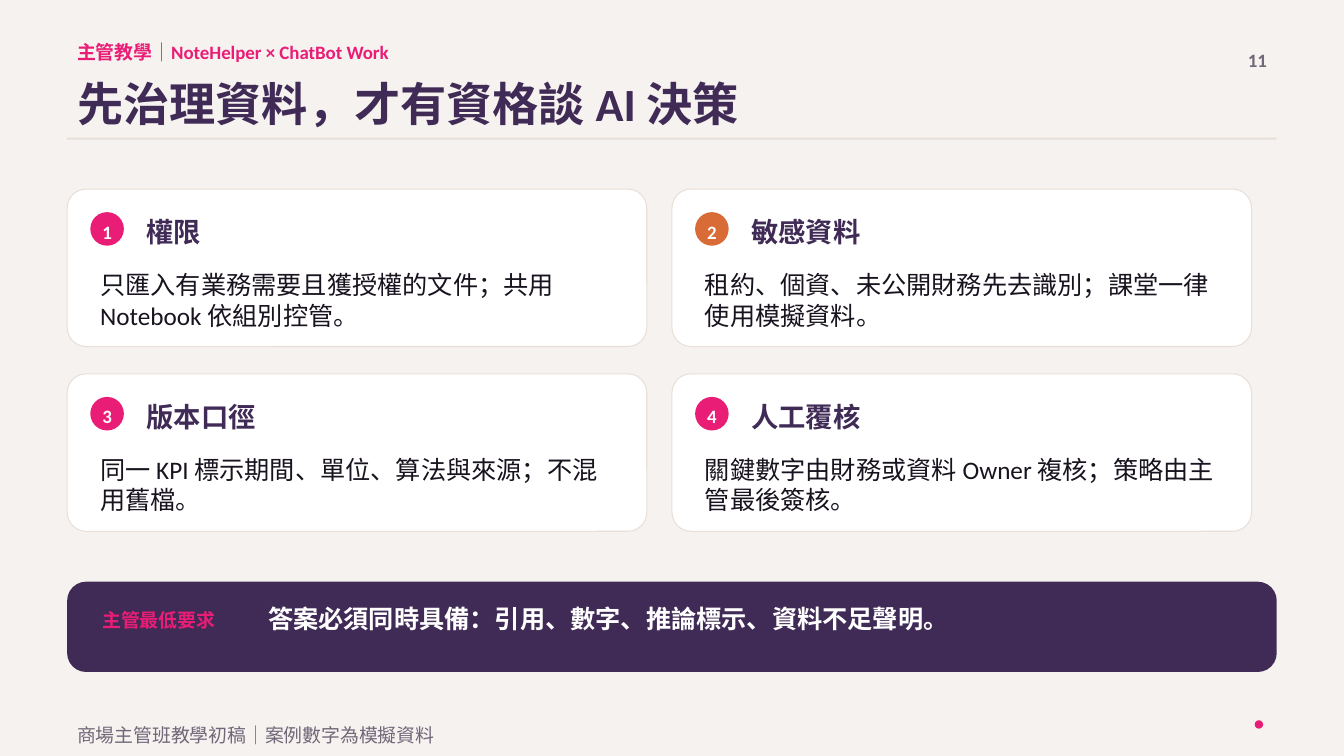
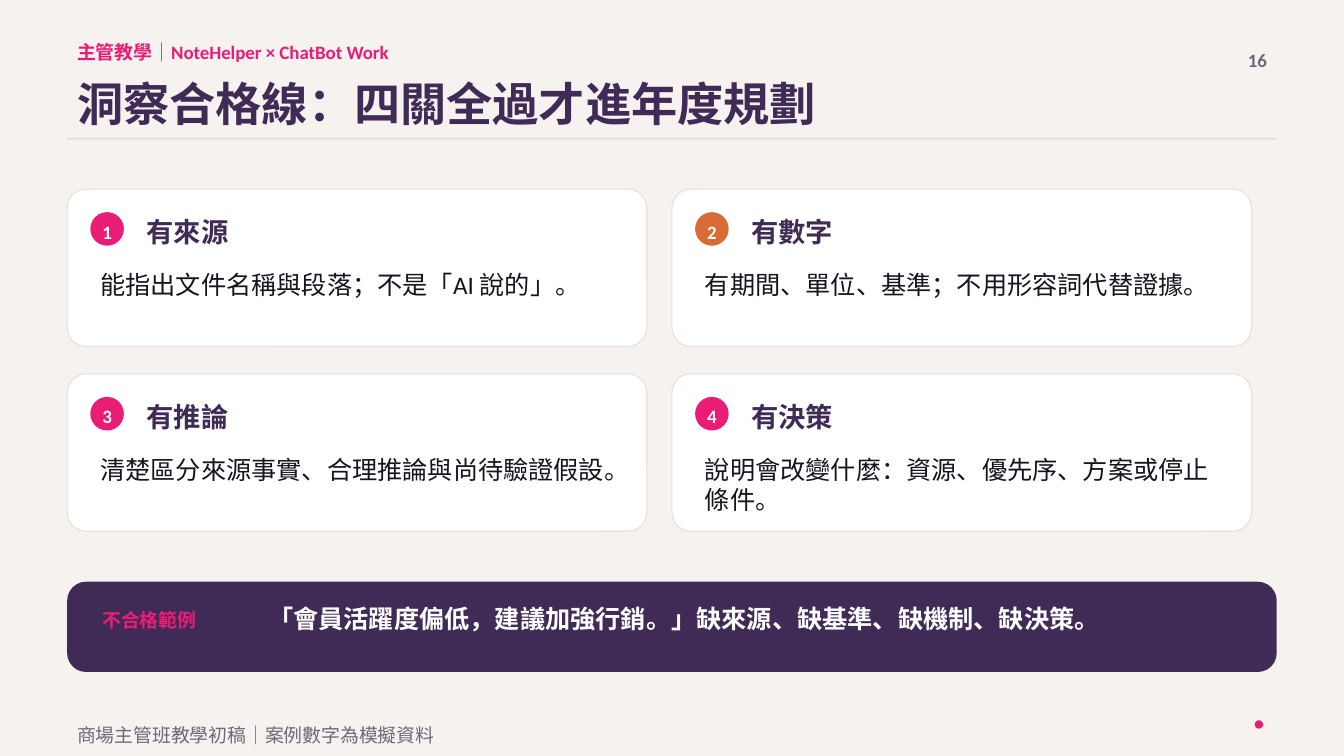
from pptx import Presentation
from pptx.dml.color import RGBColor
from pptx.enum import shapes, text
from pptx.util import Pt

PINK, ORANGE, PURPLE = "EA1D76", "D96C36", "402B56"
PAPER, RULE, WHITE = "F6F2EF", "E8DFD8", "FFFFFF"
INK, GREY = "18131E", "706879"

STYLES = {
    "label": {"size": Pt(13.5), "bold": True},
    "title": {"size": Pt(33), "bold": True},
    "heading": {"size": Pt(19.5), "bold": True},
    "body": {"size": Pt(18), "bold": False},
    "message": {"size": Pt(18), "bold": True},
    "footer": {"size": Pt(13.5), "bold": False},
}
LEFT, CONTENT_WIDTH = 48, 864
CARD_TOP, CARD_WIDTH, CARD_HEIGHT = 135, 414, 112.5
COLUMN_STEP, ROW_STEP = 432, 132
BADGE_COLORS = [PINK, ORANGE, PINK, PINK]

SLIDES = [
    {
        "number": "11",
        "title": "先治理資料，才有資格談 AI 決策",
        "cards": [
            ("權限", "只匯入有業務需要且獲授權的文件；共用 Notebook 依組別控管。"),
            ("敏感資料", "租約、個資、未公開財務先去識別；課堂一律使用模擬資料。"),
            ("版本口徑", "同一 KPI 標示期間、單位、算法與來源；不混用舊檔。"),
            ("人工覆核", "關鍵數字由財務或資料 Owner 複核；策略由主管最後簽核。"),
        ],
        "band": ("主管最低要求", "答案必須同時具備：引用、數字、推論標示、資料不足聲明。"),
    },
    {
        "number": "16",
        "title": "洞察合格線：四關全過才進年度規劃",
        "cards": [
            ("有來源", "能指出文件名稱與段落；不是「AI 說的」。"),
            ("有數字", "有期間、單位、基準；不用形容詞代替證據。"),
            ("有推論", "清楚區分來源事實、合理推論與尚待驗證假設。"),
            ("有決策", "說明會改變什麼：資源、優先序、方案或停止條件。"),
        ],
        "band": ("不合格範例", "「會員活躍度偏低，建議加強行銷。」缺來源、缺基準、缺機制、缺決策。"),
    },
]


def add_text(slide, content, box, style, color, align="LEFT"):
    frame = slide.shapes.add_textbox(*map(Pt, box)).text_frame
    frame.word_wrap = True
    paragraph = frame.paragraphs[0]
    paragraph.alignment = text.PP_ALIGN[align]
    run = paragraph.add_run()
    run.text = content
    run.font.name = "Calibri"
    run.font.color.rgb = RGBColor.from_string(color)
    for name, value in STYLES[style].items():
        setattr(run.font, name, value)


def add_block(slide, kind, box, fill, line=None, rounding=None):
    """Add a flat shape; without a line colour it has no outline."""
    shape = slide.shapes.add_shape(shapes.MSO_SHAPE[kind], *map(Pt, box))
    shape.shadow.inherit = False
    shape.fill.solid()
    shape.fill.fore_color.rgb = RGBColor.from_string(fill)
    if line:
        shape.line.color.rgb = RGBColor.from_string(line)
        shape.line.width = Pt(0.75)
    else:
        shape.line.fill.background()
    if rounding is not None:
        shape.adjustments[0] = rounding


presentation = Presentation()
presentation.slide_width, presentation.slide_height = Pt(960), Pt(540)
background = presentation.slide_master.background.fill
background.solid()
background.fore_color.rgb = RGBColor.from_string(PAPER)

for content in SLIDES:
    slide = presentation.slides.add_slide(presentation.slide_layouts[6])

    # Header
    add_text(slide, "主管教學｜NoteHelper × ChatBot Work", (LEFT, 25.5, 540, 18), "label", PINK)
    add_text(slide, content["title"], (LEFT, 50.25, 795, 43.5), "title", PURPLE)
    add_text(slide, content["number"], (870, 31.5, 42, 25.5), "label", GREY, "RIGHT")
    add_block(slide, "RECTANGLE", (LEFT, 98.25, CONTENT_WIDTH, 1.5), RULE)

    # Two by two cards
    for index, (heading, body) in enumerate(content["cards"]):
        row, column = divmod(index, 2)
        x, y = LEFT + column * COLUMN_STEP, CARD_TOP + row * ROW_STEP
        inner = x + 16.5
        add_block(slide, "ROUNDED_RECTANGLE", (x, y, CARD_WIDTH, CARD_HEIGHT), WHITE, RULE, 0.12)
        add_block(slide, "OVAL", (inner, y + 16.5, 24, 24), BADGE_COLORS[index])
        add_text(slide, str(index + 1), (inner, y + 18.75, 24, 18), "label", WHITE, "CENTER")
        add_text(slide, heading, (x + 49.5, y + 15, 342, 25.5), "heading", PURPLE)
        add_text(slide, body, (inner, y + 54, 381, 43.5), "body", INK)

    # Message band
    label, message = content["band"]
    add_block(slide, "ROUNDED_RECTANGLE", (LEFT, 415.5, CONTENT_WIDTH, 64.5), PURPLE, rounding=0.21)
    add_text(slide, label, (66, 431.25, 112.5, 18), "label", PINK)
    add_text(slide, message, (184.5, 427.5, 697.5, 33.75), "message", WHITE)

    # Footer
    add_text(slide, "商場主管班教學初稿｜案例數字為模擬資料", (LEFT, 513, 780, 13.5), "footer", GREY)
    add_block(slide, "OVAL", (896.25, 514.5, 6, 6), PINK)

presentation.save("out.pptx")
